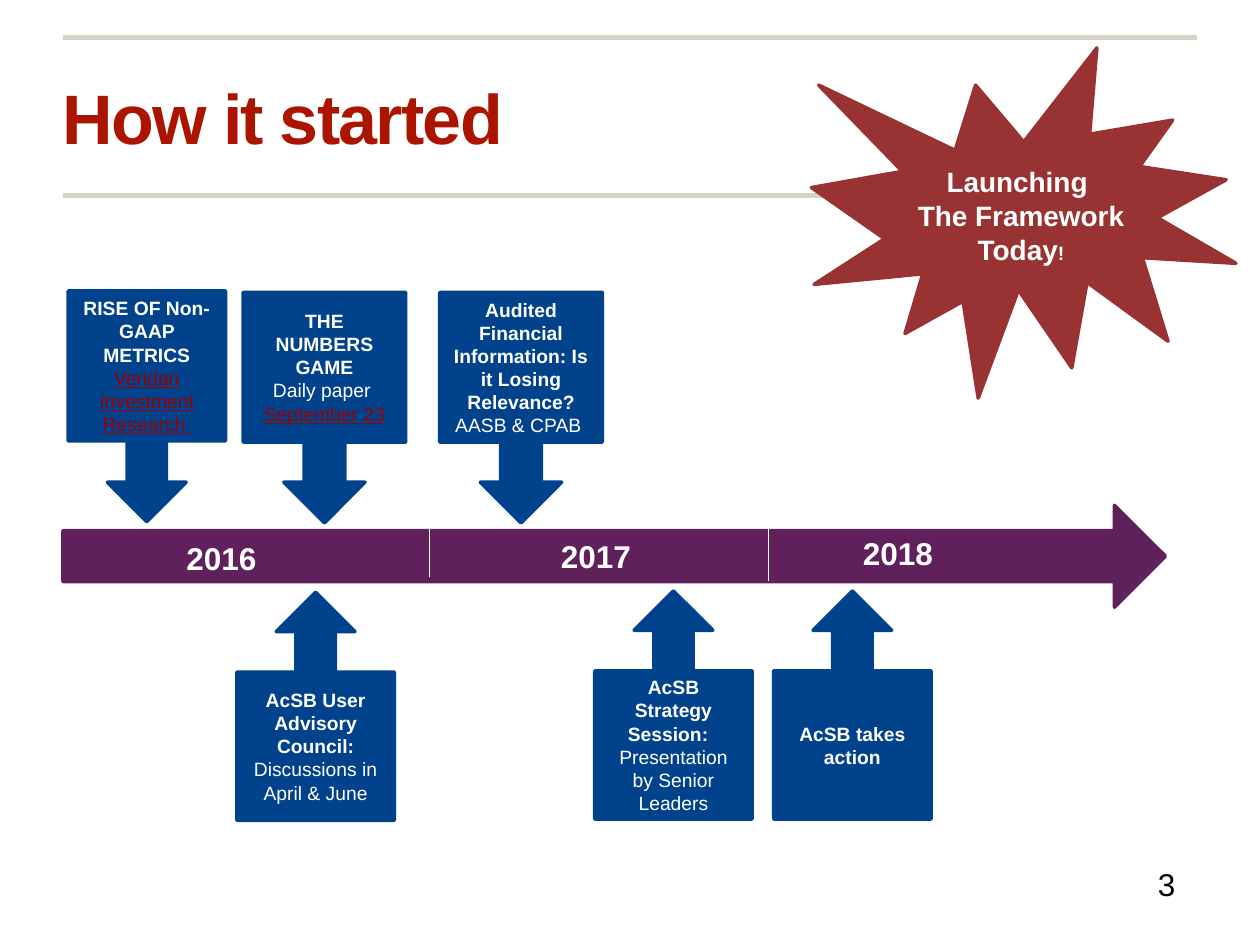
from lxml import etree
from pptx import Presentation
from pptx.dml.color import RGBColor
from pptx.enum.shapes import MSO_CONNECTOR as Connector, MSO_SHAPE as Shape
from pptx.enum.text import MSO_ANCHOR as Anchor, PP_ALIGN as Align
from pptx.oxml.ns import qn
from pptx.util import Inches, Pt

WHITE = RGBColor(0xFF, 0xFF, 0xFF)
BLACK = RGBColor(0x00, 0x00, 0x00)
RULE = RGBColor(0xD5, 0xD4, 0xC7)
TITLE_RED = RGBColor(0xAB, 0x15, 0x00)
LINK_RED = RGBColor(0x99, 0x00, 0x00)
BURST_RED = RGBColor(0x99, 0x33, 0x33)
PURPLE = RGBColor(0x60, 0x20, 0x5C)
BLUE = RGBColor(0x00, 0x43, 0x8C)

BOLD = {"bold": True}
LINK = {"color": LINK_RED, "underline": True}

# Events: left, top, width, paragraphs of (text, style) runs
EVENTS_ABOVE = [
    (1.93, 2.32, 1.29, [[("THE NUMBERS GAME", BOLD)],
                        [("Daily paper ", {})],
                        [("September 23", LINK)]]),
    (0.54, 2.31, 1.25, [[("RISE OF Non-GAAP METRICS", BOLD)],
                        [("Veridan Investment Research ", LINK)]]),
    (3.49, 2.32, 1.29, [[("Audited Financial Information: Is it Losing Relevance? ", BOLD),
                         ("AASB & CPAB ", {})]]),
]
EVENTS_BELOW = [
    (1.88, 4.7, 1.25, [[("AcSB User Advisory Council:", BOLD),
                        (" Discussions in April & June", {})]]),
    (4.72, 4.69, 1.25, [[("AcSB Strategy Session:   ", BOLD),
                         ("Presentation by Senior Leaders", {})]]),
    (6.14, 4.69, 1.25, [[("AcSB takes action", BOLD)]]),
]
YEARS = [("2016", 1.38, 4.23, Align.LEFT),
         ("2017", 3.94, 4.21, Align.CENTER),
         ("2018", 6.75, 4.19, Align.LEFT)]
YEAR_BREAKS = [(3.41, 4.15), (6.1, 4.18)]


def add_run(para, text, size=11, color=WHITE, bold=False, underline=False):
    span = para.add_run()
    span.text = text
    font = span.font
    font.name = "Arial"
    font.size = Pt(size)
    font.bold = bold
    font.underline = underline
    font.color.rgb = color
    return span


def write(frame, paragraphs, align):
    for index, runs in enumerate(paragraphs):
        para = frame.add_paragraph() if index else frame.paragraphs[0]
        para.alignment = align
        for text, style in runs:
            add_run(para, text, **style)


def add_label(page, left, top, width, height, text, style, align=Align.LEFT, wrap=True):
    box = page.shapes.add_textbox(Inches(left), Inches(top), Inches(width), Inches(height))
    box.text_frame.word_wrap = wrap
    write(box.text_frame, [[(text, style)]], align)
    return box


def add_solid(page, kind, left, top, width, height, color, paragraphs=()):
    shape = page.shapes.add_shape(kind, Inches(left), Inches(top), Inches(width), Inches(height))
    shape.shadow.inherit = False
    shape.fill.solid()
    shape.fill.fore_color.rgb = color
    shape.line.color.rgb = color
    shape.line.width = Pt(2)
    etree.SubElement(shape.line._get_or_add_ln(), qn("a:round"))
    frame = shape.text_frame
    frame.word_wrap = True
    frame.vertical_anchor = Anchor.MIDDLE
    write(frame, paragraphs, Align.CENTER)
    return shape


def add_line(page, x1, y1, x2, y2, color, weight):
    line = page.shapes.add_connector(Connector.STRAIGHT, Inches(x1), Inches(y1),
                                     Inches(x2), Inches(y2))
    line.line.color.rgb = color
    line.line.width = Pt(weight)
    etree.SubElement(line._element.spPr, qn("a:effectLst"))


def add_header(page, left, top, width, height):
    # Title between two rules
    for y in (top, top + height):
        add_line(page, left, y, left + width, y, RULE, 3)
    box = add_label(page, left, top, width, height, "How it started",
                    {"size": 40, "color": TITLE_RED, "bold": True})
    frame = box.text_frame
    frame.vertical_anchor = Anchor.MIDDLE
    frame.margin_left = frame.margin_right = frame.margin_top = frame.margin_bottom = 0
    frame.paragraphs[0].runs[0].font._element.set("spc", "-100")


def add_timeline(page, left, top, width, height):
    # Arrow with years and dividers
    add_solid(page, Shape.RIGHT_ARROW, left, top, width, height, PURPLE)
    for year, x, y, align in YEARS:
        add_label(page, x, y, 1.58, 0.4, year, {"size": 18, "bold": True}, align)
    for x, y in YEAR_BREAKS:
        add_line(page, x, y, x, y + 0.43, WHITE, 0.75)


def add_events(page, kind, height, events):
    for left, top, width, paragraphs in events:
        add_solid(page, kind, left, top, width, height, BLUE, paragraphs)


def add_burst(page, left, top, width, height):
    large = {"size": 16, "bold": True}
    burst = add_solid(page, Shape.EXPLOSION1, left, top, width, height, BURST_RED,
                      [[("Launching ", large)],
                       [("The Framework ", large)],
                       [("Today", large), ("!", BOLD)]])
    burst.text_frame.margin_top = Inches(0.1)


def main():
    deck = Presentation()
    deck.slide_width, deck.slide_height = Inches(10), Inches(7.5)
    page = deck.slides.add_slide(deck.slide_layouts[6])
    add_header(page, 0.5, 0.3, 9, 1.25)
    add_timeline(page, 0.5, 4.01, 8.75, 0.81)
    add_events(page, Shape.DOWN_ARROW_CALLOUT, 1.83, EVENTS_ABOVE)
    add_events(page, Shape.UP_ARROW_CALLOUT, 1.81, EVENTS_BELOW)
    add_burst(page, 6.44, 0.38, 3.37, 2.78)
    # Page number
    add_label(page, 9.09, 6.82, 0.51, 0.4, "3", {"size": 18, "color": BLACK}, wrap=False)
    deck.save("out.pptx")


if __name__ == "__main__":
    main()
